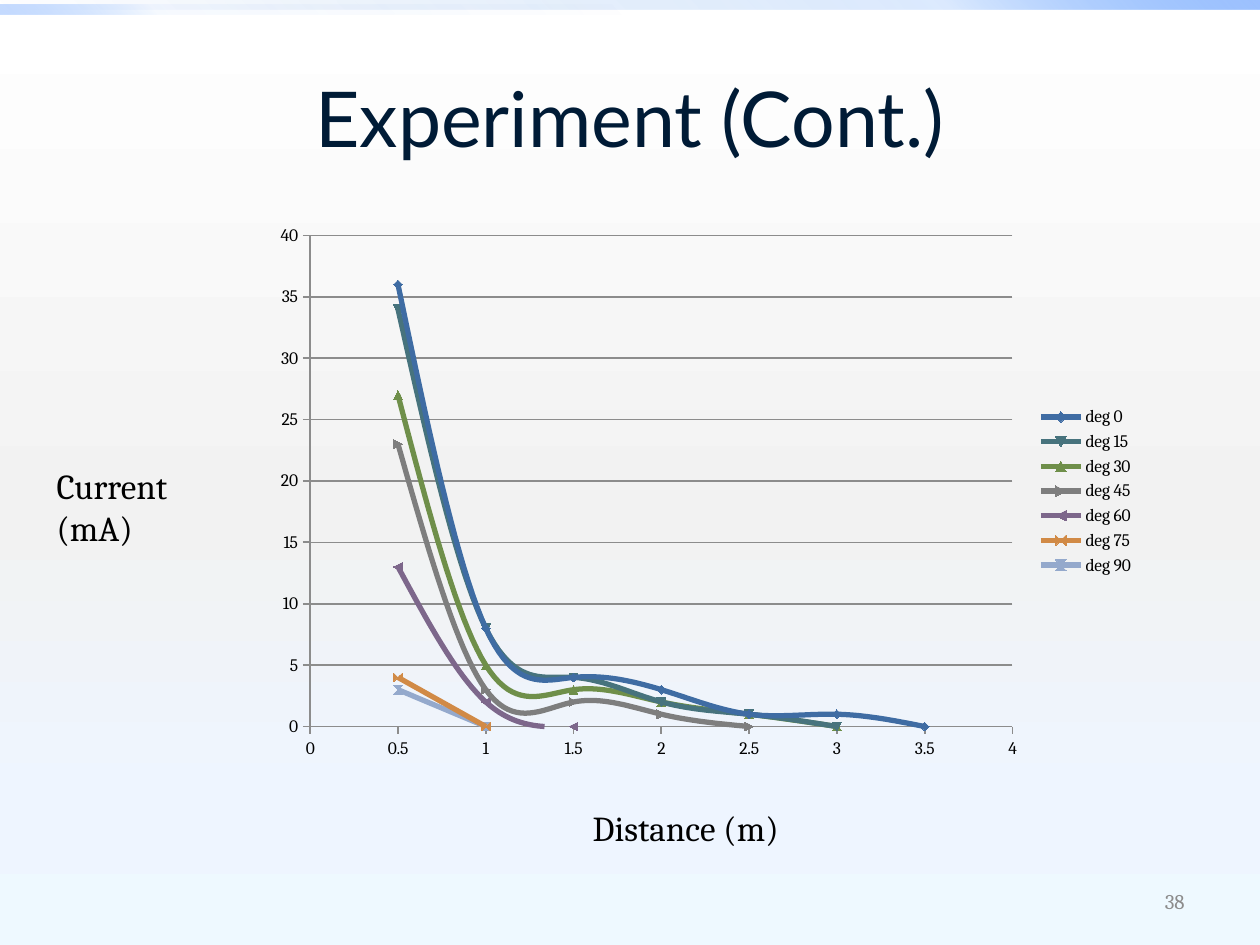
import pptx
import pptx.chart.data
import pptx.dml.color
import pptx.enum.chart
import pptx.enum.shapes
import pptx.enum.text
import pptx.oxml
import pptx.oxml.ns
import pptx.util

Cm, Pt = pptx.util.Cm, pptx.util.Pt
ALIGN = pptx.enum.text.PP_ALIGN
ANCHOR = pptx.enum.text.MSO_ANCHOR

# Content: places are left, top, width, height in cm
DISTANCES = [0.5, 1, 1.5, 2, 2.5, 3, 3.5]
CURRENTS = [
    ("deg 0", "3F6CA3", [36, 8, 4, 3, 1, 1, 0]),
    ("deg 15", "47737D", [34, 8, 4, 2, 1, 0]),
    ("deg 30", "6F8F4A", [27, 5, 3, 2, 1, 0]),
    ("deg 45", "7E7E7E", [23, 3, 2, 1, 0]),
    ("deg 60", "7D678B", [13, 2, 0]),
    ("deg 75", "D18A46", [4, 0]),
    ("deg 90", "94A9CC", [3, 0]),
]
CHART_PLACE = (5.31, 4.3, 17.81, 11.2)
PLOT_LAYOUT = {"x": 0.053, "y": 0.04, "w": 0.795, "h": 0.884}
AXIS_COLOR = "8C8C8C"

# Text, place, font, size, colour, alignment, anchor
TEXTS = [
    ("Experiment (Cont.)", (1.27, 0.76, 22.86, 3.18),
     "Lato", 44, "001B36", ALIGN.CENTER, ANCHOR.MIDDLE),
    ("38", (18.21, 17.65, 5.92, 1.02),
     "Cambria", 12, "8C8C8C", ALIGN.RIGHT, ANCHOR.MIDDLE),
    ("Distance (m)", (11.7, 16.13, 4.39, 1.12),
     "Cambria", 20, "000000", ALIGN.LEFT, ANCHOR.TOP),
    ("Current (mA)", (0.89, 9.23, 3.66, 1.96),
     "Cambria", 20, "000000", ALIGN.LEFT, ANCHOR.TOP),
]

# Gradient stops: percent, colour, opacity percent
BACKGROUND = [(0, "FFFFFF", 100), (55, "F2F2F2", 100),
              (85, "EEF5FF", 100), (100, "EEF9FF", 100)]
BARS = [
    ((0, 0, 25.4, 0.2), 315,
     [(0, "0058B7", 0), (75, "4F95FF", 20), (100, "9EC2FF", 100)]),
    ((0, 0.1, 12.7, 0.2), 135,
     [(0, "0058B7", 0), (75, "4F95FF", 5), (100, "9EC2FF", 60)]),
]


def color(code):
    return pptx.dml.color.RGBColor.from_string(code)


def set_values(target, values):
    for name, value in values.items():
        setattr(target, name, value)


def set_gradient(fill, stops, angle):
    """Replace the stops of a fill and set its clockwise angle."""
    fill.gradient()
    fill.gradient_angle = -angle % 360
    stop_list = fill.gradient_stops[0]._gs.getparent()
    for old_stop in list(stop_list):
        stop_list.remove(old_stop)
    namespace = pptx.oxml.ns.nsdecls("a")
    for percent, code, opacity in stops:
        stop_list.append(pptx.oxml.parse_xml(
            f'<a:gs {namespace} pos="{percent * 1000}"><a:srgbClr val="{code}">'
            f'<a:alpha val="{opacity * 1000}"/></a:srgbClr></a:gs>'))


def set_line(line, code, width):
    line.color.rgb = color(code)
    line.width = Pt(width)


def add_text(page, text, place, font, size, code, align, anchor):
    box = page.shapes.add_textbox(*map(Cm, place))
    set_values(box.text_frame, {"word_wrap": True, "vertical_anchor": anchor})
    para = box.text_frame.paragraphs[0]
    para.alignment = align
    span = para.add_run()
    span.text = text
    set_values(span.font, {"name": font, "size": Pt(size)})
    span.font.color.rgb = color(code)


def add_current_chart(page):
    data = pptx.chart.data.XyChartData()
    for name, _, currents in CURRENTS:
        series = data.add_series(name)
        for distance, current in zip(DISTANCES, currents):
            series.add_data_point(distance, current)
    kinds = pptx.enum.chart.XL_CHART_TYPE
    chart = page.shapes.add_chart(
        kinds.XY_SCATTER_SMOOTH, *map(Cm, CHART_PLACE), data).chart
    set_values(chart, {"has_title": False, "has_legend": True})
    set_values(chart.font, {"name": "Cambria", "size": Pt(10)})
    chart.font.color.rgb = color("000000")
    set_values(chart.legend, {
        "position": pptx.enum.chart.XL_LEGEND_POSITION.RIGHT,
        "include_in_layout": False})
    chart.plots[0].vary_by_categories = False

    # Axes
    for axis, top, step, grid in ((chart.category_axis, 4, 0.5, False),
                                  (chart.value_axis, 40, 5, True)):
        set_values(axis, {
            "minimum_scale": 0, "maximum_scale": top, "major_unit": step,
            "has_major_gridlines": grid,
            "major_tick_mark": pptx.enum.chart.XL_TICK_MARK.OUTSIDE,
            "minor_tick_mark": pptx.enum.chart.XL_TICK_MARK.NONE})
        set_values(axis.tick_labels, {
            "number_format": "General", "number_format_is_linked": False})
        set_line(axis.format.line, AXIS_COLOR, 1)
    set_line(chart.value_axis.major_gridlines.format.line, AXIS_COLOR, 0.9)

    # Curves
    for series, (_, code, _) in zip(chart.plots[0].series, CURRENTS):
        series._element.get_or_add_smooth().val = True
        set_line(series.format.line, code, 3)
        series.marker.size = 5
        series.marker.format.fill.solid()
        series.marker.format.fill.fore_color.rgb = color(code)
        set_line(series.marker.format.line, code, 0.75)

    # Fixed inner plot area
    plot_area = chart._chartSpace.chart.plotArea
    for old_layout in plot_area.findall(pptx.oxml.ns.qn("c:layout")):
        plot_area.remove(old_layout)
    modes = "".join(f'<c:{side}Mode val="edge"/>' for side in "xy")
    sizes = "".join(f'<c:{key} val="{share}"/>' for key, share in PLOT_LAYOUT.items())
    plot_area.insert(0, pptx.oxml.parse_xml(
        f'<c:layout {pptx.oxml.ns.nsdecls("c")}><c:manualLayout>'
        f'<c:layoutTarget val="inner"/>{modes}{sizes}</c:manualLayout></c:layout>'))


def main():
    deck = pptx.Presentation()
    set_values(deck, {"slide_width": Cm(25.4), "slide_height": Cm(19.05)})
    page = deck.slides.add_slide(deck.slide_layouts[6])
    set_gradient(page.background.fill, BACKGROUND, 90)

    # Top bars
    for place, angle, stops in BARS:
        bar = page.shapes.add_shape(
            pptx.enum.shapes.MSO_SHAPE.RECTANGLE, *map(Cm, place))
        bar.shadow.inherit = False
        bar.line.fill.background()
        set_gradient(bar.fill, stops, angle)

    for entry in TEXTS:
        add_text(page, *entry)
    add_current_chart(page)
    deck.save("out.pptx")


if __name__ == "__main__":
    main()
